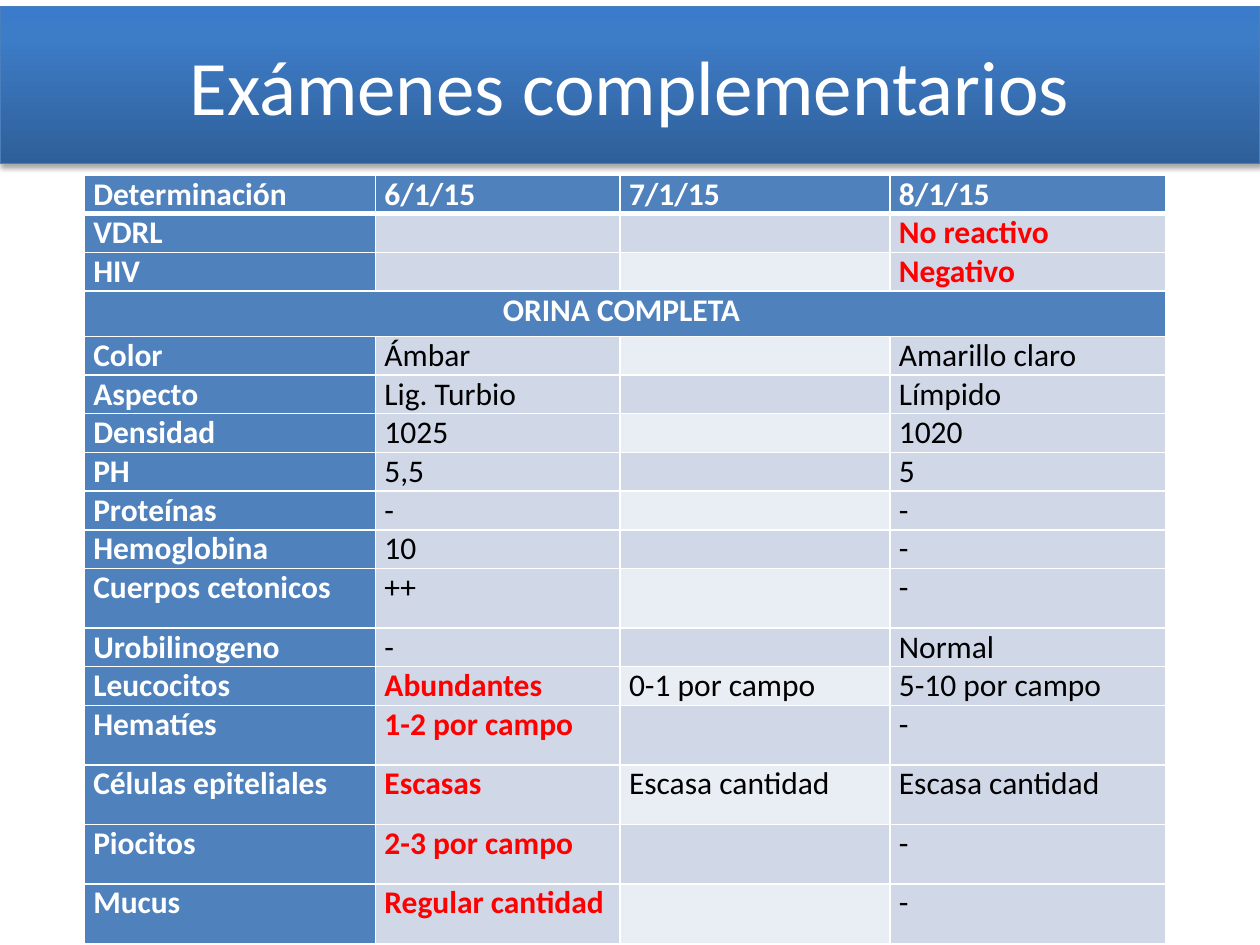
from lxml.etree import SubElement
from pptx import Presentation
from pptx.dml.color import RGBColor
from pptx.enum.shapes import MSO_SHAPE
from pptx.enum.text import MSO_ANCHOR, PP_ALIGN
from pptx.oxml.ns import qn
from pptx.util import Cm, Pt

FONT = "Calibri"
WHITE, BLACK, RED = "FFFFFF", "000000", "FF0000"
BLUE, BAND_DARK, BAND_LIGHT = "4F81BD", "D0D8E8", "E9EDF4"
TITLE_GRADIENT = {0: "2F5F99", 80: "3D7CC7", 100: "3A7CCB"}

COLUMN_WIDTHS = [5.87, 4.93, 5.44, 5.56]
ROW_HEIGHT, SECTION_HEIGHT, TALL_HEIGHT = 0.78, 0.91, 1.2
SECTION = "ORINA COMPLETA "
TALL_ROWS = {"Cuerpos cetonicos", "Hematíes", "Células epiteliales", "Piocitos", "Mucus"}
ABNORMAL = {"No reactivo", "Negativo", "Abundantes", "1-2 por campo",
            "Escasas", "2-3 por campo", "Regular cantidad"}
RESULTS = [
    ("Determinación", "6/1/15", "7/1/15", "8/1/15"),
    ("VDRL", "", "", "No reactivo"),
    ("HIV", "", "", "Negativo"),
    (SECTION, "", "", ""),
    ("Color", "Ámbar", "", "Amarillo claro"),
    ("Aspecto", "Lig. Turbio", "", "Límpido"),
    ("Densidad", "1025", "", "1020"),
    ("PH", "5,5", "", "5"),
    ("Proteínas", "-", "", "-"),
    ("Hemoglobina", "10", "", "-"),
    ("Cuerpos cetonicos", "++", "", "-"),
    ("Urobilinogeno", "-", "", "Normal"),
    ("Leucocitos", "Abundantes", "0-1 por campo", "5-10 por campo"),
    ("Hematíes", "1-2 por campo", "", "-"),
    ("Células epiteliales", "Escasas", "Escasa cantidad", "Escasa cantidad"),
    ("Piocitos", "2-3 por campo", "", "-"),
    ("Mucus", "Regular cantidad", "", "-"),
]


def rgb(color):
    return RGBColor.from_string(color)


def add_color(parent, color):
    return SubElement(parent, qn("a:srgbClr"), val=color)


def write(paragraph, text, size, color, bold=False, align=PP_ALIGN.LEFT):
    paragraph.alignment = align
    run = paragraph.add_run()
    run.text = text
    run.font.color.rgb = rgb(color)
    for name, value in {"name": FONT, "size": Pt(size), "bold": bold}.items():
        setattr(run.font, name, value)


def fill_gradient(shape, stops):
    """Fill the shape with stops given as percent: colour, from bottom to top."""
    shape.fill.gradient()
    shape.fill.gradient_angle = 90
    stop_list = shape._element.spPr.find(".//" + qn("a:gsLst"))
    for old_stop in list(stop_list):
        stop_list.remove(old_stop)
    for percent, color in stops.items():
        add_color(SubElement(stop_list, qn("a:gs"), pos=str(percent * 1000)), color)


def add_shadow(shape):
    shape.shadow.inherit = False
    effects = shape._element.spPr.find(qn("a:effectLst"))
    shadow = SubElement(effects, qn("a:outerShdw"), blurRad=str(Pt(3.1)),
                        dist=str(Pt(1.8)), dir="5400000", rotWithShape="0")
    SubElement(add_color(shadow, BLACK), qn("a:alpha"), val="35000")


def add_title_band(slide, left, top, width, height):
    band = slide.shapes.add_shape(MSO_SHAPE.RECTANGLE, Cm(left), Cm(top), Cm(width), Cm(height))
    fill_gradient(band, TITLE_GRADIENT)
    band.line.color.rgb = rgb("4B7EBC")
    band.line.width = Pt(0.75)
    add_shadow(band)
    band.text_frame.word_wrap = True
    band.text_frame.vertical_anchor = MSO_ANCHOR.MIDDLE
    write(band.text_frame.paragraphs[0], "Exámenes complementarios", 44, WHITE,
          align=PP_ALIGN.CENTER)


def row_height(determination):
    if determination == SECTION:
        return SECTION_HEIGHT
    return TALL_HEIGHT if determination in TALL_ROWS else ROW_HEIGHT


def cell_fill(row, column):
    """Blue for headings; only the 7/1/15 column alternates its bands."""
    if row == 0 or column == 0:
        return BLUE
    return BAND_LIGHT if column == 2 and row % 2 == 0 else BAND_DARK


def set_borders(cell, bottom_width):
    properties = cell._tc.get_or_add_tcPr()
    widths = {"a:lnL": 1, "a:lnR": 1, "a:lnT": 1, "a:lnB": bottom_width}
    for position, (side, width) in enumerate(widths.items()):
        line = SubElement(properties, qn(side), w=str(Pt(width)))
        add_color(SubElement(line, qn("a:solidFill")), WHITE)
        properties.insert(position, line)


def format_cell(cell, text, row, column):
    for name, value in {"margin_left": Cm(0.18), "margin_right": Cm(0.18),
                        "margin_top": 0, "margin_bottom": 0}.items():
        setattr(cell, name, value)
    background = cell_fill(row, column)
    cell.fill.solid()
    cell.fill.fore_color.rgb = rgb(background)
    set_borders(cell, 3 if row == 0 else 1)
    paragraph = cell.text_frame.paragraphs[0]
    if not text:
        SubElement(paragraph._p, qn("a:endParaRPr"), sz="1800")
        return
    heading = background == BLUE
    abnormal = text in ABNORMAL
    color = WHITE if heading else RED if abnormal else BLACK
    align = PP_ALIGN.CENTER if text == SECTION else PP_ALIGN.LEFT
    write(paragraph, text, 18, color, heading or abnormal, align)


def add_results_table(slide, left, top):
    heights = [row_height(result[0]) for result in RESULTS]
    table = slide.shapes.add_table(len(RESULTS), len(COLUMN_WIDTHS), Cm(left), Cm(top),
                                   Cm(sum(COLUMN_WIDTHS)), Cm(sum(heights))).table
    for column, width in zip(table.columns, COLUMN_WIDTHS):
        column.width = Cm(width)
    for row, (result, height) in enumerate(zip(RESULTS, heights)):
        table.rows[row].height = Cm(height)
        for column, text in enumerate(result):
            format_cell(table.cell(row, column), text, row, column)
        if result[0] == SECTION:
            table.cell(row, 0).merge(table.cell(row, len(COLUMN_WIDTHS) - 1))


def main():
    presentation = Presentation()
    presentation.slide_width, presentation.slide_height = Cm(25.4), Cm(19.05)
    slide = presentation.slides.add_slide(presentation.slide_layouts[6])
    add_title_band(slide, 0, 0.13, 25.4, 3.17)
    add_results_table(slide, 1.7, 3.53)
    presentation.save("out.pptx")


if __name__ == "__main__":
    main()
